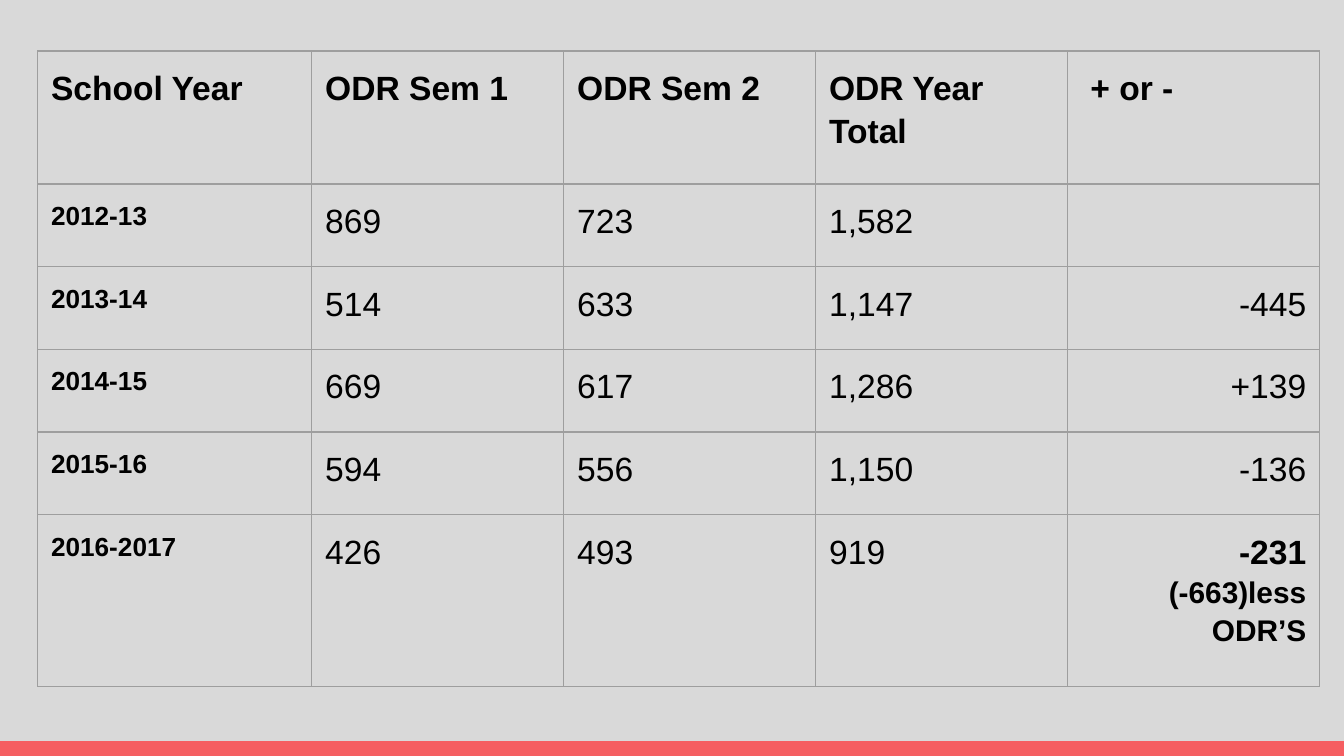
from lxml.etree import SubElement
from pptx import Presentation
from pptx.dml.color import RGBColor
from pptx.enum.shapes import MSO_SHAPE
from pptx.enum.text import PP_ALIGN
from pptx.oxml.ns import qn
from pptx.util import Inches, Pt

# Content
HEAD = ["School Year", "ODR Sem 1", "ODR Sem 2", "ODR Year Total", " + or -"]
ROWS = [
    ["2012-13", "869", "723", "1,582", ""],
    ["2013-14", "514", "633", "1,147", "-445"],
    ["2014-15", "669", "617", "1,286", "+139"],
    ["2015-16", "594", "556", "1,150", "-136"],
    ["2016-2017", "426", "493", "919", "-231\n(-663)less ODR’S"],
]

# Layout and formats: a 16:9 slide, equal columns and rows after the first
WIDE, BAR = 10, 0.11
HIGH = WIDE * 9 / 16
LEFT, TOP, PAD = 0.28, 0.38, 0.1
COLS = [2.04] + [7.5 / 4] * 4
TALL = [0.99] + [2.46 / 4] * 4 + [1.28]
BOLD = {"size": Pt(18), "bold": True}
YEAR = {"size": Pt(14), "bold": True}
PLAIN = {"size": Pt(18), "bold": False}
NOTE = {"size": Pt(16), "bold": True}


def paint(fill, color):
    fill.solid()
    fill.fore_color.rgb = RGBColor.from_string(color)


def border(cell, color, width):
    props = cell._tc.get_or_add_tcPr()
    for side in ("a:lnL", "a:lnR", "a:lnT", "a:lnB"):
        line = SubElement(props, qn(side), w=str(Pt(width)))
        fill = SubElement(line, qn("a:solidFill"))
        SubElement(fill, qn("a:srgbClr"), val=color)


def style(row, col, part):
    if part:
        return NOTE
    if row == 0 or (row == len(ROWS) and col == len(HEAD) - 1):
        return BOLD
    return PLAIN if col else YEAR


def write(cell, text, row, col):
    frame = cell.text_frame
    for part, words in enumerate(text.split("\n")):
        para = frame.add_paragraph() if part else frame.paragraphs[0]
        para.line_spacing = 1.15
        if row and col == len(HEAD) - 1:
            para.alignment = PP_ALIGN.RIGHT
        if not words:
            continue
        run = para.add_run()
        run.text = words
        run.font.name = "Arial"
        paint(run.font.fill, "000000")
        for key, value in style(row, col, part).items():
            setattr(run.font, key, value)


# Slide and bottom bar
deck = Presentation()
deck.slide_width, deck.slide_height = Inches(WIDE), Inches(HIGH)
slide = deck.slides.add_slide(deck.slide_layouts[6])
paint(slide.background.fill, "D9D9D9")
bar = slide.shapes.add_shape(MSO_SHAPE.RECTANGLE, 0, Inches(HIGH - BAR),
                             Inches(WIDE), Inches(BAR))
bar.shadow.inherit = False
paint(bar.fill, "F55E61")
bar.line.fill.background()

# Table
data = [HEAD] + ROWS
table = slide.shapes.add_table(len(data), len(HEAD), Inches(LEFT), Inches(TOP),
                               Inches(sum(COLS)), Inches(sum(TALL))).table
table.first_row = table.horz_banding = False
for col, width in zip(table.columns, COLS):
    col.width = Inches(width)
for row, height in zip(table.rows, TALL):
    row.height = Inches(height)
for r, line in enumerate(data):
    for c, text in enumerate(line):
        cell = table.cell(r, c)
        for side in ("left", "right", "top", "bottom"):
            setattr(cell, "margin_" + side, Inches(PAD))
        border(cell, "9E9E9E", 0.75)
        cell.fill.background()
        write(cell, text, r, c)

deck.save("out.pptx")
